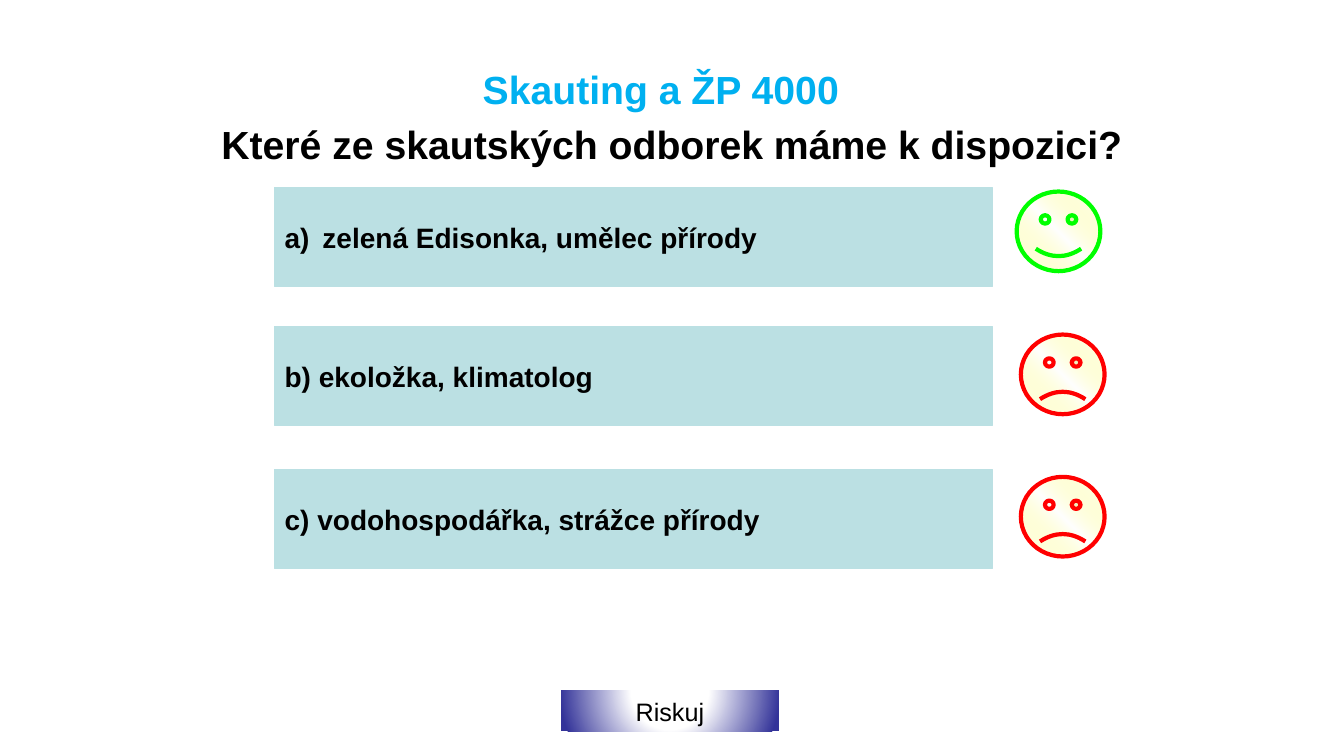
from lxml.etree import SubElement
from pptx import Presentation
from pptx.dml.color import RGBColor
from pptx.enum.shapes import MSO_SHAPE
from pptx.enum.text import MSO_ANCHOR, PP_ALIGN
from pptx.oxml import parse_xml
from pptx.oxml.ns import nsdecls, qn
from pptx.util import Pt

BLACK = RGBColor(0x00, 0x00, 0x00)
SKY = RGBColor(0x00, 0xB0, 0xF0)
TEAL = RGBColor(0xBB, 0xE0, 0xE3)
GREEN = RGBColor(0x00, 0xFF, 0x00)
RED = RGBColor(0xFF, 0x00, 0x00)
WHITE = RGBColor(0xFF, 0xFF, 0xFF)
YELLOW = RGBColor(0xFF, 0xFF, 0x66)
NAVY = RGBColor(0x33, 0x33, 0x99)

FACE_STOPS = [(0, WHITE, 100), (50, YELLOW, 0), (100, WHITE, 100)]
FACE_SHADE = '<a:lin ang="18900000" scaled="1"/>'
RISK_STOPS = [(0, WHITE, 100), (35, WHITE, 100), (100, NAVY, 100)]
RISK_SHADE = ('<a:path path="circle"><a:fillToRect l="50000" t="-80000" '
              'r="50000" b="180000"/></a:path>')

# text, top of the bar, left and top of the face within the row, correct
ANSWERS = [
    ("zelená Edisonka, umělec přírody", 133.9, 530, 2.9, True),
    ("b) ekoložka, klimatolog", 233.3, 533, 5.7, False),
    ("c) vodohospodářka, strážce přírody", 335.5, 533, 5.1, False),
]


def style(p, size, color=BLACK, bold=True):
    for r in p.runs:
        r.font.name, r.font.size, r.font.bold = "Arial", Pt(size), bold
        r.font.color.rgb = color


def gradient(sp, stops, shade):
    """Fill with (position, colour, opacity) stops, both in per cent."""
    gs = "".join(
        f'<a:gs pos="{pos * 1000}"><a:srgbClr val="{color}">'
        f'<a:alpha val="{alpha * 1000}"/></a:srgbClr></a:gs>'
        for pos, color, alpha in stops)
    sp.fill.background()
    no_fill = sp._element.spPr.find(qn("a:noFill"))
    no_fill.getparent().replace(no_fill, parse_xml(
        f'<a:gradFill {nsdecls("a")} rotWithShape="1">'
        f'<a:gsLst>{gs}</a:gsLst>{shade}</a:gradFill>'))


def add_shape(s, kind, x, y, w, h):
    sp = s.shapes.add_shape(kind, Pt(x), Pt(y), Pt(w), Pt(h))
    sp.shadow.inherit = False
    return sp


def add_label(sp, text, size, align, bold):
    tf = sp.text_frame
    tf.word_wrap = True
    tf.vertical_anchor = MSO_ANCHOR.MIDDLE
    tf.margin_left = tf.margin_right = Pt(7.2)
    tf.margin_top = tf.margin_bottom = Pt(3.6)
    p = tf.paragraphs[0]
    p.text = text
    p.alignment = align
    style(p, size, bold=bold)
    return p


def add_heading(s, x, y, w, h):
    tf = s.shapes.add_textbox(Pt(x), Pt(y), Pt(w), Pt(h)).text_frame
    tf.word_wrap = True
    tf.margin_left = tf.margin_right = 0
    title, question = tf.paragraphs[0], tf.add_paragraph()
    title.text = "Skauting a ŽP 4000"
    question.text = "Které ze skautských odborek máme k dispozici?"
    question.space_before = Pt(5.6)
    question._p.get_or_add_pPr().set("indent", str(Pt(15.6)))
    for p, color in ((title, SKY), (question, BLACK)):
        p.alignment = PP_ALIGN.CENTER
        style(p, 28, color)


def add_face(s, x, y, w, h, happy):
    sp = add_shape(s, MSO_SHAPE.SMILEY_FACE, x, y, w, h)
    sp.adjustments[0] = 0.047 if happy else -0.047
    gradient(sp, FACE_STOPS, FACE_SHADE)
    sp.line.color.rgb = GREEN if happy else RED
    sp.line.width = Pt(3)


def add_answers(s, x, w, h):
    for i, (text, y, face_x, face_y, correct) in enumerate(ANSWERS):
        sp = add_shape(s, MSO_SHAPE.ACTION_BUTTON_CUSTOM, x, y, w, h)
        sp.fill.solid()
        sp.fill.fore_color.rgb = TEAL
        sp.line.color.rgb = TEAL
        sp.line.width = Pt(1)
        p = add_label(sp, text, 20, PP_ALIGN.LEFT, True)
        if i == 0:
            pPr = p._p.get_or_add_pPr()
            pPr.set("marL", str(Pt(27)))
            pPr.set("indent", str(-Pt(27)))
            SubElement(pPr, qn("a:buAutoNum"), type="alphaLcParenR")
        add_face(s, x + face_x, y + face_y, 59.8, 56.9, correct)


def add_risk_button(s, x, y, w, h):
    sp = add_shape(s, MSO_SHAPE.ACTION_BUTTON_CUSTOM, x, y, w, h)
    gradient(sp, RISK_STOPS, RISK_SHADE)
    sp.line.fill.background()
    add_label(sp, "Riskuj", 18, PP_ALIGN.CENTER, False)


def main():
    prs = Presentation()
    prs.slide_width, prs.slide_height = Pt(960), Pt(540)
    s = prs.slides.add_slide(prs.slide_layouts[6])
    add_heading(s, 138.5, 43.2, 667, 54)
    add_answers(s, 196.2, 512.6, 70.6)
    add_risk_button(s, 400.8, 493.6, 155.5, 28.8)
    prs.save("out.pptx")


if __name__ == "__main__":
    main()
